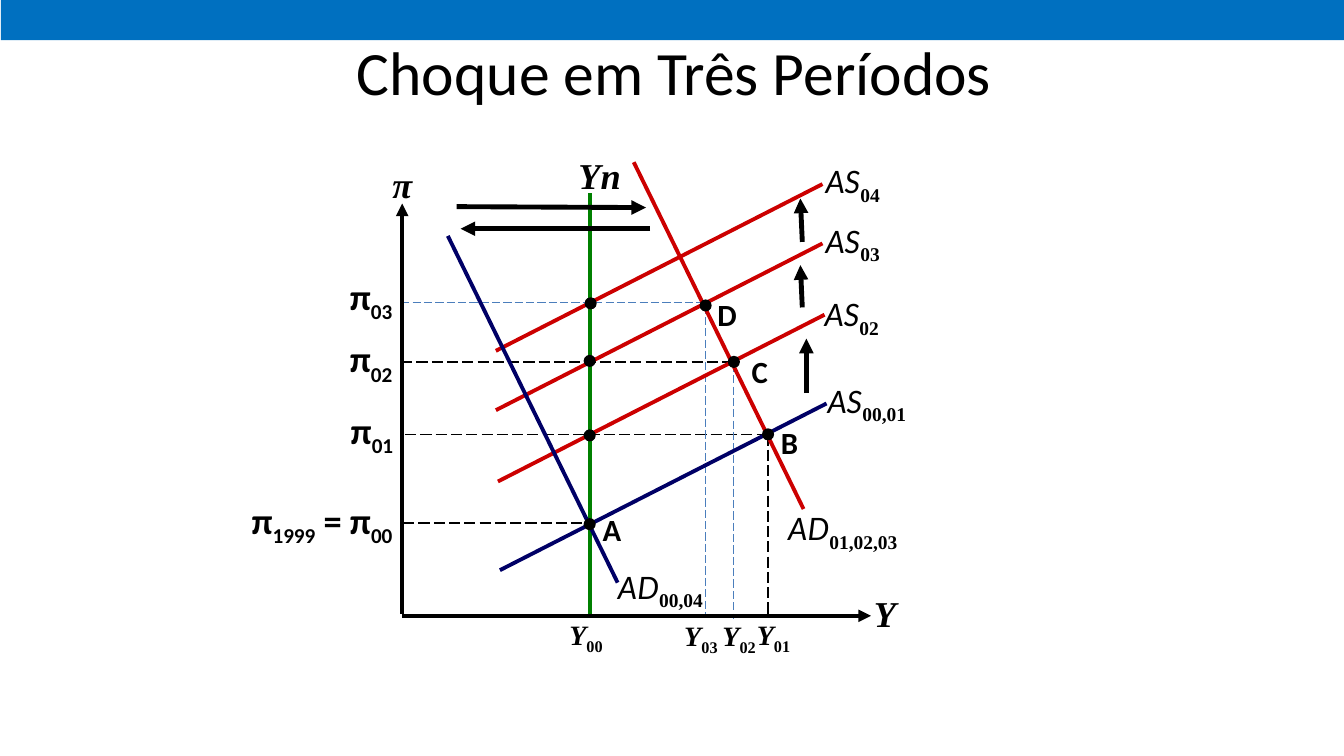
from lxml.etree import SubElement
from pptx import Presentation
from pptx.dml.color import RGBColor
from pptx.enum.dml import MSO_LINE
from pptx.enum.shapes import MSO_CONNECTOR, MSO_SHAPE
from pptx.enum.text import MSO_ANCHOR, PP_ALIGN
from pptx.oxml.ns import qn
from pptx.util import Pt

BLACK, NAVY, RED, GREEN, BLUE = "000000", "000066", "CC0000", "008000", "4B7EBC"
BAR = "0070C0"

# font, size, bold, italic, subscript
STYLES = {
    "title": ("Calibri", 44, False, False, False),
    "pi": ("Calibri", 26, True, False, False),
    "pi sub": ("Calibri", 26, True, False, True),
    "axis": ("Times New Roman", 26, True, True, False),
    "curve": ("Lato", 22, False, True, False),
    "curve sub": ("Times New Roman", 24, True, False, True),
    "output": ("Times New Roman", 20, True, True, False),
    "output sub": ("Times New Roman", 20, True, False, True),
    "point": ("Calibri", 22, True, False, False),
}

# start x, start y, colour, periods, label x, label y
SUPPLY = [
    (357.1, 407.3, NAVY, "00,01", 591.1, 271.4),
    (355.7, 343.9, RED, "02", 589, 209.5),
    (354.2, 293, RED, "03", 589.7, 157),
    (354.2, 250.6, RED, "04", 589.7, 114.5),
]
DEMAND = [
    (319.9, 168.5, NAVY, "00,04", 441.4, 403.9),
    (452.7, 115.9, RED, "01,02,03", 563, 362.2),
]
SUPPLY_RUN = (233.3, -119.1)
DEMAND_RUN = (121.3, 247.7)

# x1, y1, x2, y2, colour, width
GUIDES = [
    (288, 373.7, 420.5, 373.7, BLACK, 1),
    (420.5, 373.7, 420.5, 441.4, BLACK, 1),
    (289.4, 310.3, 548.6, 310.3, BLACK, 1),
    (548.6, 310.3, 548.6, 439.9, BLACK, 1),
    (286.6, 258.5, 522.7, 258.5, BLACK, 1),
    (524.2, 259.9, 524.2, 442.1, BLUE, 0.75),
    (286.6, 216, 504, 216, BLUE, 0.75),
    (504, 218.2, 504, 440.6, BLUE, 0.75),
]
# x1, y1, x2, y2, width
ARROWS = [
    (287.3, 438.5, 287.3, 145.4, 3),
    (287.3, 439.9, 622.1, 439.9, 3),
    (326.2, 147.6, 461.5, 148.3, 3.5),
    (464.4, 163.4, 329, 163.4, 3.5),
    (576, 280.8, 576, 241.9, 3.5),
    (573.1, 219.6, 571.7, 189.4, 3.5),
    (573.1, 172.8, 571.7, 141.8, 3.5),
]
DOTS = [(421.2, 374.4), (421.2, 311), (421.2, 257.8), (421.9, 216.7),
        (548.6, 310.3), (524.2, 258.5), (504, 218.2)]
DOT = 8.64

POINTS = [("A", 423.4, 361.4), ("B", 550.8, 298.8),
          ("C", 529.9, 248.4), ("D", 505.4, 207.4)]
INFLATION = [("01", 240.5, 288), ("02", 239.8, 236.9), ("03", 239.8, 192.2)]
OUTPUT = [("00", 399.6, 437.8), ("01", 533.5, 437.8),
          ("02", 509, 438.5), ("03", 481.7, 438.5)]


def rgb(hex_colour):
    return RGBColor.from_string(hex_colour)


def add_line(x1, y1, x2, y2, colour, width, dashed=False, arrow=False):
    c = slide.shapes.add_connector(
        MSO_CONNECTOR.STRAIGHT, Pt(x1), Pt(y1), Pt(x2), Pt(y2))
    c.line.color.rgb = rgb(colour)
    c.line.width = Pt(width)
    if dashed:
        c.line.dash_style = MSO_LINE.LONG_DASH
    if arrow:
        SubElement(c.line._get_or_add_ln(), qn("a:tailEnd"), type="triangle")
    SubElement(c._element.spPr, qn("a:effectLst"))


def add_solid(kind, x, y, w, h, colour):
    sp = slide.shapes.add_shape(kind, Pt(x), Pt(y), Pt(w), Pt(h))
    sp.shadow.inherit = False
    sp.fill.solid()
    sp.fill.fore_color.rgb = rgb(colour)
    sp.line.fill.background()


def add_label(x, y, w, h, runs, centred=False, insets=(7.2, 3.6, 7.2, 3.6)):
    """Write (text, style name) runs in one paragraph; insets run left, top, right, bottom."""
    tf = slide.shapes.add_textbox(Pt(x), Pt(y), Pt(w), Pt(h)).text_frame
    tf.word_wrap = True
    tf.margin_left, tf.margin_top, tf.margin_right, tf.margin_bottom = map(Pt, insets)
    p = tf.paragraphs[0]
    p.alignment = PP_ALIGN.CENTER if centred else PP_ALIGN.LEFT
    for text, style in runs:
        r = p.add_run()
        r.text = text
        font, size, bold, italic, subscript = STYLES[style]
        r.font.name, r.font.size = font, Pt(size)
        r.font.bold, r.font.italic = bold, italic
        r.font.color.rgb = rgb(BLACK)
        if subscript:
            r.font._element.set("baseline", "-25000")
    return tf


def add_curves(name, curves, run):
    dx, dy = run
    for x, y, colour, periods, label_x, label_y in curves:
        add_line(x, y, x + dx, y + dy, colour, 2.75)
        add_label(label_x, label_y, 130, 33.8,
                  [(name, "curve"), (periods, "curve sub")], insets=(0, 0, 0, 7.2))


prs = Presentation()
prs.slide_width, prs.slide_height = Pt(960), Pt(540)
slide = prs.slides.add_slide(prs.slide_layouts[6])

add_solid(MSO_SHAPE.RECTANGLE, 0.72, 0, 959.28, 28.8, BAR)
title = add_label(157, 20.9, 649.4, 59.8, [("Choque em Três Períodos", "title")], centred=True)
title.vertical_anchor = MSO_ANCHOR.MIDDLE

for guide in GUIDES:
    add_line(*guide, dashed=True)
add_line(421.2, 138.2, 421.2, 439.2, GREEN, 2.75)
add_curves("AS", SUPPLY, SUPPLY_RUN)
add_curves("AD", DEMAND, DEMAND_RUN)
for x1, y1, x2, y2, width in ARROWS:
    add_line(x1, y1, x2, y2, BLACK, width, arrow=True)
for x, y in DOTS:
    add_solid(MSO_SHAPE.OVAL, x - DOT / 2, y - DOT / 2, DOT, DOT, BLACK)

add_label(266.4, 112.3, 41.8, 38.9, [("π", "axis")], centred=True)
add_label(406.1, 105.8, 67.7, 38.9, [("Yn", "axis")])
add_label(624.2, 421.9, 32.4, 35.3, [("Y", "axis")], insets=(0, 0, 0, 3.6))
add_label(166.3, 352.1, 127.4, 38.9, [
    ("π", "pi"), ("1999", "pi sub"), (" = π", "pi"), ("00", "pi sub")], centred=True)
for period, x, y in INFLATION:
    add_label(x, y, 50.4, 38.9, [("π", "pi"), (period, "pi sub")], centred=True)
for period, x, y in OUTPUT:
    add_label(x, y, 45, 31.7, [("Y", "output"), (period, "output sub")])
for letter, x, y in POINTS:
    add_label(x, y, 30, 33.8, [(letter, "point")])

prs.save("out.pptx")
